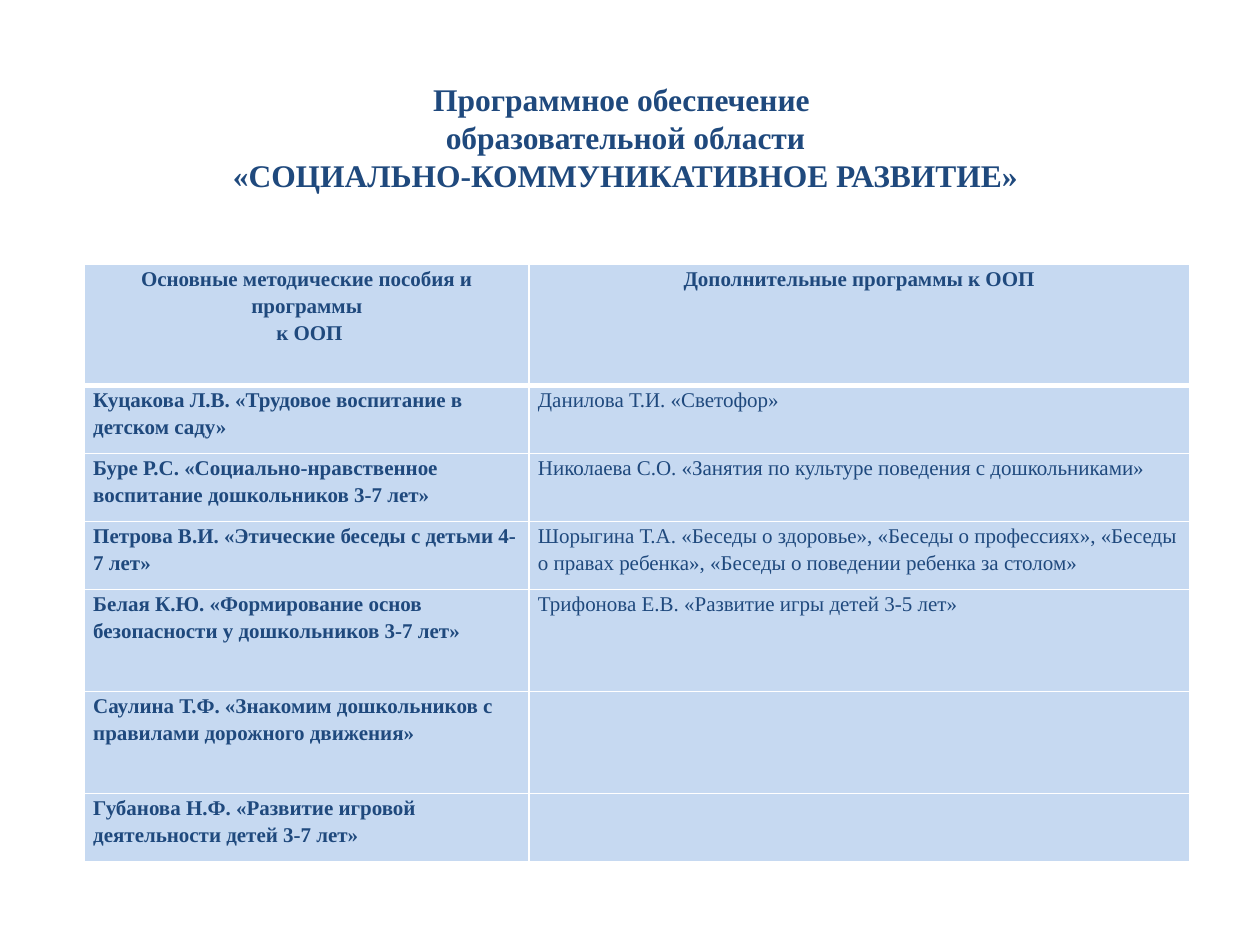
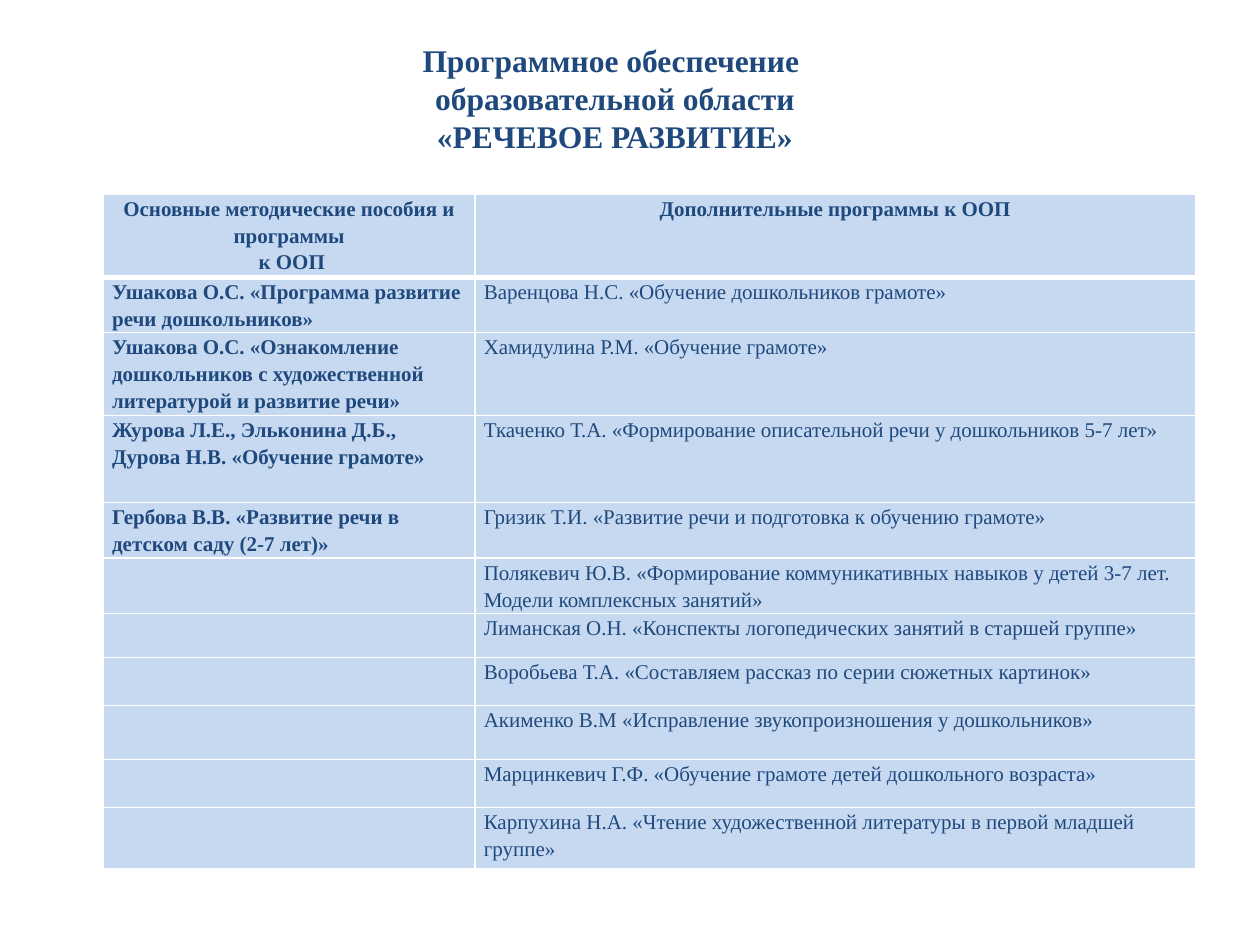
from lxml import etree
from pptx import Presentation
from pptx.dml.color import RGBColor
from pptx.enum import text
from pptx.oxml import ns
from pptx.util import Inches, Pt

NAVY = RGBColor(0x1F, 0x49, 0x7D)
PALE_BLUE = RGBColor(0xC6, 0xD9, 0xF1)
WHITE = RGBColor(0xFF, 0xFF, 0xFF)
FONT = "Times New Roman"
TITLE_ONLY = 5
TITLE_START = "Программное обеспечение \nобразовательной области\n"
HEADINGS = ("Основные методические пособия и программы\n к ООП",
            "Дополнительные программы к ООП")

SOCIAL_ROWS = [
    (0.54, "Куцакова Л.В. «Трудовое воспитание в детском саду»",
     "Данилова Т.И. «Светофор»"),
    (0.54, "Буре Р.С. «Социально-нравственное воспитание дошкольников 3-7 лет»",
     "Николаева С.О. «Занятия по культуре поведения с дошкольниками»"),
    (0.54, "Петрова В.И. «Этические беседы с детьми 4-7 лет»",
     "Шорыгина Т.А. «Беседы о здоровье», «Беседы о профессиях», «Беседы о правах ребенка», "
     "«Беседы о поведении ребенка за столом»"),
    (0.81, "Белая К.Ю. «Формирование основ безопасности у дошкольников 3-7 лет»",
     "Трифонова Е.В. «Развитие игры детей 3-5 лет»"),
    (0.81, "Саулина Т.Ф. «Знакомим дошкольников с правилами дорожного движения»", ""),
    (0.54, "Губанова Н.Ф. «Развитие игровой деятельности детей 3-7 лет»", ""),
]
SPEECH_ROWS = [
    (0.44, "Ушакова О.С. «Программа развитие речи дошкольников»",
     "Варенцова Н.С. «Обучение дошкольников грамоте»"),
    (0.66, "Ушакова О.С. «Ознакомление дошкольников с художественной литературой и развитие речи»",
     "Хамидулина Р.М. «Обучение грамоте»"),
    (0.69, "Журова Л.Е., Эльконина Д.Б., Дурова Н.В. «Обучение грамоте»",
     "Ткаченко Т.А. «Формирование описательной речи у дошкольников 5-7 лет»"),
    (0.44, "Гербова В.В. «Развитие речи в детском саду (2-7 лет)»",
     "Гризик Т.И. «Развитие речи и подготовка к обучению грамоте»"),
    (0.44, "", "Полякевич Ю.В. «Формирование коммуникативных навыков у детей 3-7 лет. "
     "Модели комплексных занятий»"),
    (0.35, "", "Лиманская О.Н. «Конспекты логопедических занятий в старшей группе»"),
    (0.38, "", "Воробьева Т.А. «Составляем рассказ по серии сюжетных картинок»"),
    (0.43, "", "Акименко В.М «Исправление звукопроизношения у дошкольников»"),
    (0.38, "", "Марцинкевич Г.Ф. «Обучение грамоте детей дошкольного возраста»"),
    (0.49, "", "Карпухина Н.А. «Чтение художественной литературы в первой младшей группе»"),
]


def write(frame, content, size, bold, align, spacing=None):
    """Fill a text frame with paragraphs in the shared font and colour."""
    frame.text = content
    for paragraph in frame.paragraphs:
        paragraph.alignment = align
        paragraph.line_spacing = spacing
        for run in paragraph.runs:
            run.font.name = FONT
            run.font.size = Pt(size)
            run.font.bold = bold
            run.font.color.rgb = NAVY


def set_borders(cell, top, bottom):
    """Draw white cell borders, one point wide at the sides."""
    properties = cell._tc.get_or_add_tcPr()
    sides = (("lnL", 1), ("lnR", 1), ("lnT", top), ("lnB", bottom))
    for index, (side, width) in enumerate(sides):
        line = etree.Element(ns.qn(f"a:{side}"), w=str(Pt(width)))
        fill = etree.SubElement(line, ns.qn("a:solidFill"))
        etree.SubElement(fill, ns.qn("a:srgbClr"), val=str(WHITE))
        properties.insert(index, line)


def place_title(slide, box, area):
    """Place the three-line title slightly above the middle of its box."""
    title = slide.shapes.title
    title.left, title.top, title.width, title.height = map(Inches, box)
    frame = title.text_frame
    write(frame, TITLE_START + area, 18, True, text.PP_ALIGN.CENTER)
    frame.word_wrap = True
    frame.auto_size = text.MSO_AUTO_SIZE.NONE
    frame.vertical_anchor = text.MSO_ANCHOR.MIDDLE
    frame.margin_bottom = Inches(0.35)


def place_programmes(slide, left, top, column_widths, heading_height, entries):
    """Build the two-column table of main and additional programmes."""
    rows = [(heading_height, *HEADINGS), *entries]
    width, height = sum(column_widths), sum(row[0] for row in rows)
    table = slide.shapes.add_table(
        len(rows), 2, *map(Inches, (left, top, width, height))).table
    for column, column_width in zip(table.columns, column_widths):
        column.width = Inches(column_width)
    for row_index, (row_height, *programmes) in enumerate(rows):
        table.rows[row_index].height = Inches(row_height)
        is_heading = row_index == 0
        align = text.PP_ALIGN.CENTER if is_heading else text.PP_ALIGN.LEFT
        for column_index, programme in enumerate(programmes):
            cell = table.cell(row_index, column_index)
            cell.margin_left = cell.margin_right = Inches(0.07)
            cell.margin_top = cell.margin_bottom = 0
            cell.fill.solid()
            cell.fill.fore_color.rgb = PALE_BLUE
            set_borders(cell, 3 if row_index == 1 else 1, 3 if is_heading else 1)
            if programme:
                write(cell.text_frame, programme, 12,
                      is_heading or column_index == 0, align, 1.15)


def main():
    """Build both slides and save the presentation."""
    deck = Presentation()
    deck.slide_width, deck.slide_height = Inches(10), Inches(7.5)
    layout = deck.slide_layouts[TITLE_ONLY]

    social = deck.slides.add_slide(layout)
    place_title(social, (0.91, 0.58, 8.11, 1.31), "«СОЦИАЛЬНО-КОММУНИКАТИВНОЕ РАЗВИТИЕ»")
    place_programmes(social, 0.67, 2.1, (3.53, 5.24), 0.96, SOCIAL_ROWS)

    speech = deck.slides.add_slide(layout)
    place_title(speech, (0.59, 0.27, 8.58, 1.31), "«РЕЧЕВОЕ РАЗВИТИЕ»")
    place_programmes(speech, 0.82, 1.54, (2.95, 5.72), 0.66, SPEECH_ROWS)

    deck.save("out.pptx")


if __name__ == "__main__":
    main()
